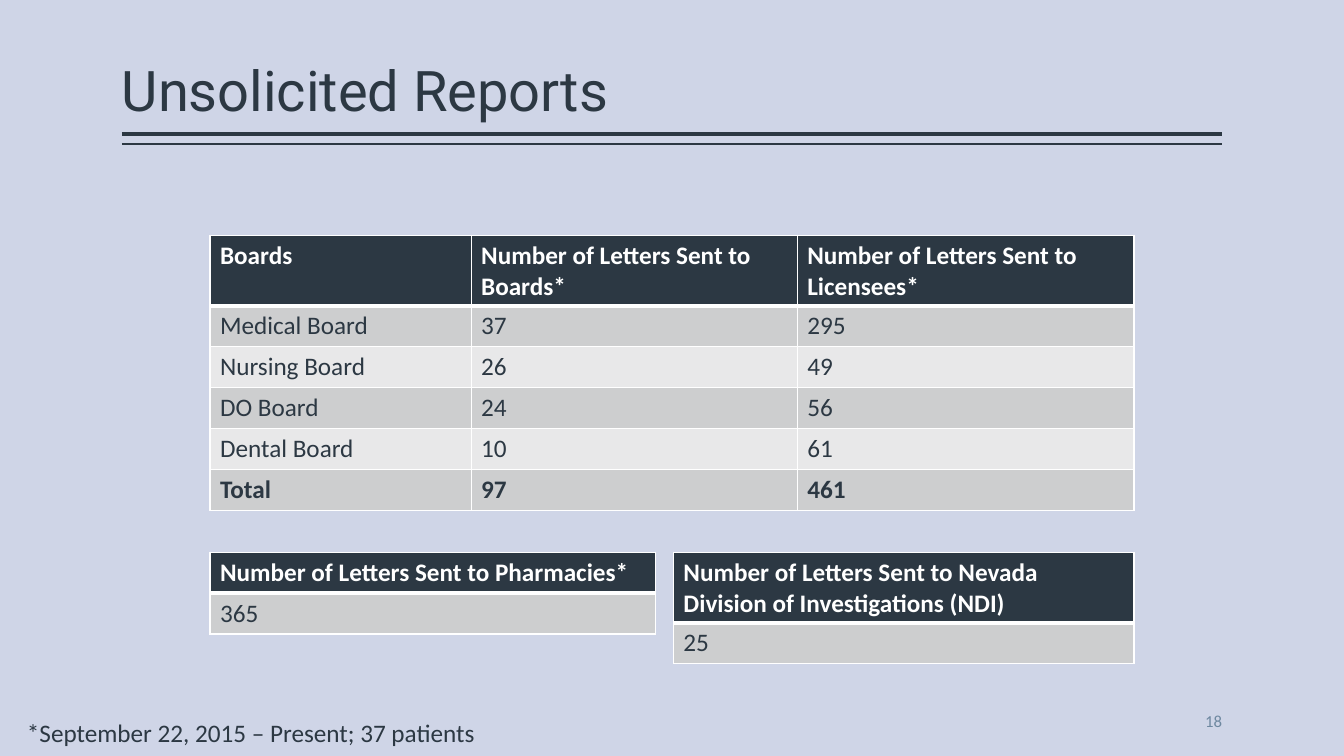
from lxml.etree import SubElement
from pptx import Presentation
from pptx.dml.color import RGBColor
from pptx.enum.shapes import MSO_CONNECTOR
from pptx.enum.text import MSO_ANCHOR, PP_ALIGN
from pptx.oxml.ns import qn
from pptx.util import Pt

NAVY = "2C3843"
WHITE = "FFFFFF"
BAND_DARK = "CDCECF"
BAND_LIGHT = "E8E8E9"
ROW_HEIGHT = 29.2

BOARD_LETTERS = [
    ("Boards", "Number of Letters Sent to Boards*", "Number of Letters Sent to Licensees*"),
    ("Medical Board", "37", "295"),
    ("Nursing Board", "26", "49"),
    ("DO Board", "24", "56"),
    ("Dental Board", "10", "61"),
    ("Total", "97", "461"),
]
PHARMACY_LETTERS = [("Number of Letters Sent to Pharmacies*",), ("365",)]
NDI_LETTERS = [("Number of Letters Sent to Nevada Division of Investigations (NDI)",), ("25",)]


def paint(color_format, color):
    color_format.rgb = RGBColor.from_string(color)


def add_words(paragraph, words, size, color, font="Calibri", bold=False):
    run = paragraph.add_run()
    run.text = words
    run.font.name = font
    run.font.size = Pt(size)
    run.font.bold = bold
    paint(run.font.color, color)


def add_label(slide, box, words, size, color, font="Calibri", side=7.2,
              anchor=MSO_ANCHOR.TOP, align=PP_ALIGN.LEFT, spacing=1.0):
    frame = slide.shapes.add_textbox(*map(Pt, box)).text_frame
    frame.word_wrap = True
    frame.margin_left = frame.margin_right = Pt(side)
    frame.vertical_anchor = anchor
    paragraph = frame.paragraphs[0]
    paragraph.alignment = align
    paragraph.line_spacing = spacing
    add_words(paragraph, words, size, color, font)


def add_rule(slide, left, top, width, weight):
    rule = slide.shapes.add_connector(
        MSO_CONNECTOR.STRAIGHT, Pt(left), Pt(top), Pt(left + width), Pt(top))
    paint(rule.line.color, NAVY)
    rule.line.width = Pt(weight)
    SubElement(rule._element.spPr, qn("a:effectLst"))


def add_heading(slide, left, top, width, height):
    add_label(slide, (left, top, width, height), "Unsolicited Reports", 40, NAVY,
              "Roboto", 0, MSO_ANCHOR.BOTTOM, spacing=0.9)
    add_rule(slide, left, top + height + 3.6, width, 3)
    add_rule(slide, left, top + height + 10.8, width, 1)


def add_borders(cell, top, bottom):
    properties = cell._tc.get_or_add_tcPr()
    for side, weight in (("L", 1), ("R", 1), ("T", top), ("B", bottom)):
        border = SubElement(properties, qn(f"a:ln{side}"), w=str(Pt(weight)))
        fill = SubElement(border, qn("a:solidFill"))
        SubElement(fill, qn("a:srgbClr"), val=WHITE)


def add_letters_table(slide, left, top, column_widths, rows):
    table = slide.shapes.add_table(
        len(rows), len(column_widths), Pt(left), Pt(top),
        Pt(sum(column_widths)), Pt(ROW_HEIGHT * len(rows))).table
    for column, width in zip(table.columns, column_widths):
        column.width = Pt(width)
    for r, row in enumerate(rows):
        header = r == 0
        band = NAVY if header else BAND_DARK if r % 2 else BAND_LIGHT
        for c, words in enumerate(row):
            cell = table.cell(r, c)
            add_borders(cell, 3 if r == 1 else 1, 3 if header else 1)
            cell.fill.solid()
            paint(cell.fill.fore_color, band)
            add_words(cell.text_frame.paragraphs[0], words, 18,
                      WHITE if header else NAVY, bold=header or row[0] == "Total")


def add_footer(slide, left, top, right):
    add_label(slide, (left, top, 437, 29), "*September 22, 2015 – Present; 37 patients",
              18, NAVY)
    add_label(slide, (right - 144, top - 8.6, 144, 28.8), "18", 12, "6E88A0",
              side=0, anchor=MSO_ANCHOR.MIDDLE, align=PP_ALIGN.RIGHT)


def main():
    deck = Presentation()
    deck.slide_width, deck.slide_height = Pt(960), Pt(540)
    slide = deck.slides.add_slide(deck.slide_layouts[6])
    slide.background.fill.solid()
    paint(slide.background.fill.fore_color, "CFD5E7")
    add_heading(slide, 87, 5.8, 786, 86.4)
    add_letters_table(slide, 150, 168, (186.5, 233, 240.5), BOARD_LETTERS)
    add_footer(slide, 12.2, 509, 873)
    add_letters_table(slide, 150, 394.5, (318,), PHARMACY_LETTERS)
    add_letters_table(slide, 481, 394.5, (329,), NDI_LETTERS)
    deck.save("out.pptx")


if __name__ == "__main__":
    main()
